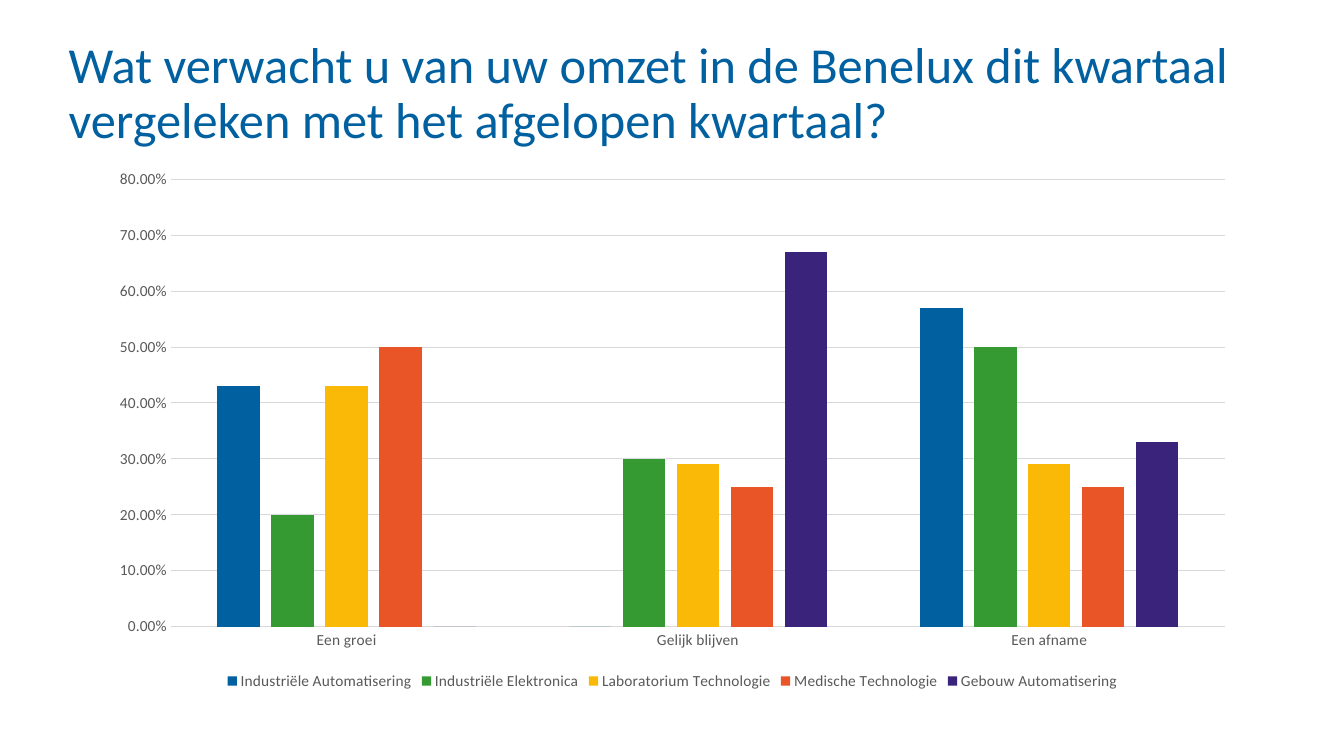
from dataclasses import dataclass

from pptx import Presentation
from pptx.chart.data import CategoryChartData
from pptx.dml.color import RGBColor
from pptx.enum.chart import XL_CHART_TYPE, XL_LEGEND_POSITION, XL_TICK_MARK
from pptx.enum.text import MSO_ANCHOR
from pptx.util import Cm, Pt

COLUMNS = XL_CHART_TYPE.COLUMN_CLUSTERED
LEGEND_BOTTOM = XL_LEGEND_POSITION.BOTTOM
NO_TICK = XL_TICK_MARK.NONE
TOP = MSO_ANCHOR.TOP


@dataclass(frozen=True)
class Theme:
    font: str = "Calibri"
    title_color: str = "0060A0"
    label_color: str = "595959"
    line_color: str = "D9D9D9"
    title_size: int = 36
    label_size: int = 11
    line_width: float = 0.75


THEME = Theme()

TITLE = "Wat verwacht u van uw omzet in de Benelux dit kwartaal vergeleken met het afgelopen kwartaal?"
EXPECTATIONS = ("Een groei", "Gelijk blijven", "Een afname")
SECTORS = (
    ("Industriële Automatisering", (0.43, 0, 0.57), "0060A0"),
    ("Industriële Elektronica", (0.2, 0.3, 0.5), "359A32"),
    ("Laboratorium Technologie", (0.43, 0.29, 0.29), "FAB907"),
    ("Medische Technologie", (0.5, 0.25, 0.25), "E95527"),
    ("Gebouw Automatisering", (0, 0.67, 0.33), "3A237B"),
)


def format_font(font, size, color):
    font.name = THEME.font
    font.size = Pt(size)
    font.color.rgb = RGBColor.from_string(color)


def format_line(line):
    line.color.rgb = RGBColor.from_string(THEME.line_color)
    line.width = Pt(THEME.line_width)


def add_text(slide, text, left, top, width, height, *, size, color, line_spacing=1.0):
    box = slide.shapes.add_textbox(Cm(left), Cm(top), Cm(width), Cm(height))
    frame = box.text_frame
    frame.word_wrap = True
    frame.vertical_anchor = TOP
    frame.margin_left = frame.margin_right = frame.margin_top = frame.margin_bottom = 0
    paragraph = frame.paragraphs[0]
    paragraph.line_spacing = line_spacing
    run = paragraph.add_run()
    run.text = text
    format_font(run.font, size, color)


def format_axis(axis):
    axis.major_tick_mark = axis.minor_tick_mark = NO_TICK
    format_font(axis.tick_labels.font, THEME.label_size, THEME.label_color)


def add_column_chart(slide, left, top, width, height):
    data = CategoryChartData(number_format="0.00%")
    data.categories = EXPECTATIONS
    for name, values, _ in SECTORS:
        data.add_series(name, values)
    chart = slide.shapes.add_chart(
        COLUMNS, Cm(left), Cm(top), Cm(width), Cm(height), data
    ).chart
    format_font(chart.font, THEME.label_size, THEME.label_color)
    chart.has_title = False

    plot = chart.plots[0]
    plot.vary_by_categories = False
    plot.gap_width = 219
    plot.overlap = -27
    for series, (_, _, color) in zip(plot.series, SECTORS):
        series.invert_if_negative = False
        series.format.fill.solid()
        series.format.fill.fore_color.rgb = RGBColor.from_string(color)

    format_axis(chart.category_axis)
    format_line(chart.category_axis.format.line)

    value_axis = chart.value_axis
    format_axis(value_axis)
    value_axis.minimum_scale = 0
    value_axis.maximum_scale = 0.8
    value_axis.major_unit = 0.1
    value_axis.tick_labels.number_format = "0.00%"
    value_axis.tick_labels.number_format_is_linked = False
    value_axis.format.line.fill.background()
    format_line(value_axis.major_gridlines.format.line)

    chart.has_legend = True
    chart.legend.position = LEGEND_BOTTOM
    chart.legend.include_in_layout = False
    format_font(chart.legend.font, THEME.label_size, THEME.label_color)


def main():
    presentation = Presentation()
    presentation.slide_width = Cm(33.87)
    presentation.slide_height = Cm(19.05)
    slide = presentation.slides.add_slide(presentation.slide_layouts[6])
    add_text(slide, TITLE, 1.73, 1.02, 30.3, 1.93,
             size=THEME.title_size, color=THEME.title_color, line_spacing=0.9)
    add_column_chart(slide, 2.44, 4.01, 29.01, 13.49)
    presentation.save("out.pptx")


if __name__ == "__main__":
    main()
